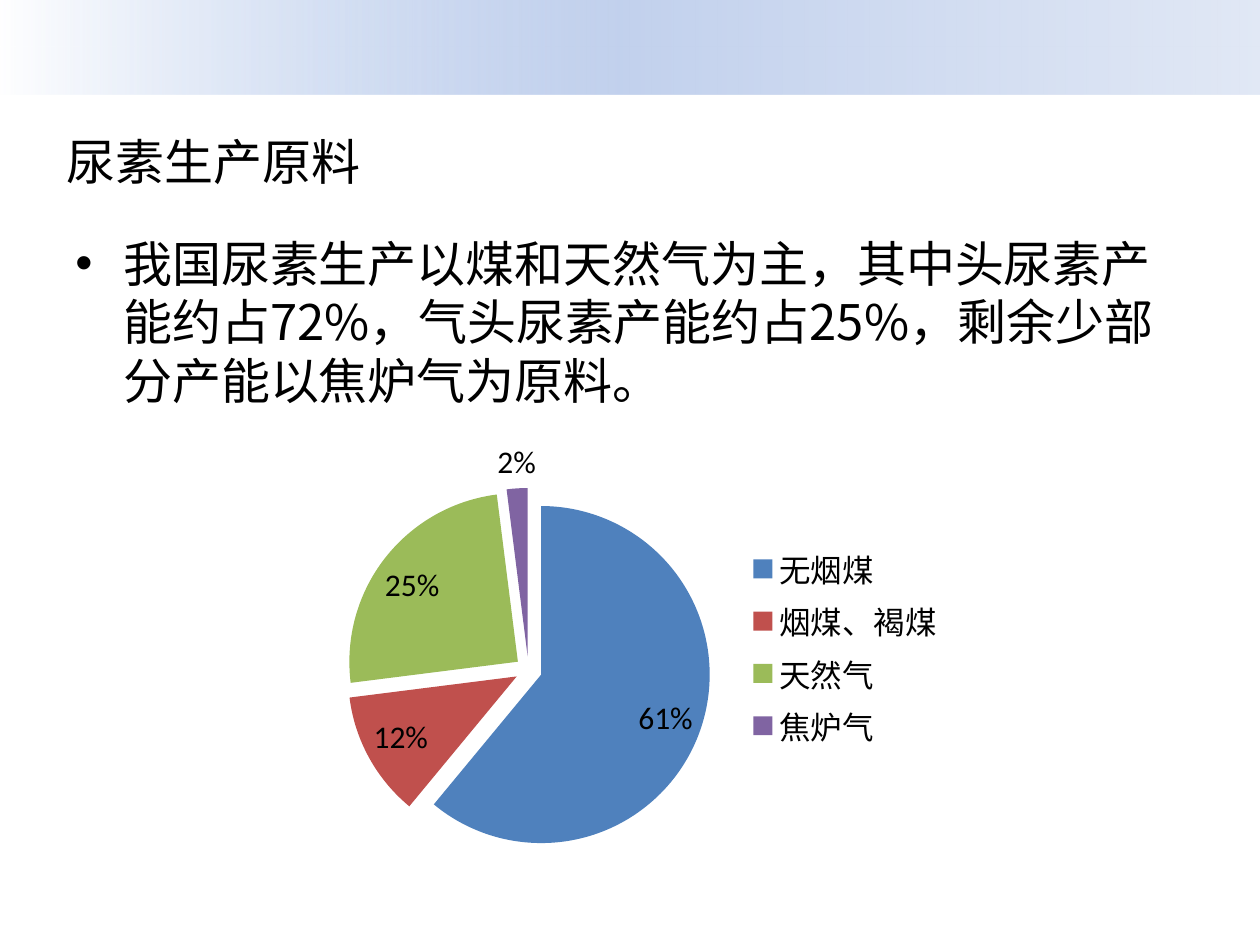
import pptx
import pptx.util
import pptx.chart.data
import pptx.dml.color
import pptx.enum.chart
import pptx.enum.shapes
import pptx.enum.text
import pptx.oxml
import pptx.oxml.ns

WIDE, HIGH = 10, 7.5
FACE = "Noto Sans CJK JP"
STOPS = [(0, "9AB5E4", 0), (50, "C2D1ED", 100), (100, "E1E8F5", 100)]
PARTS = [
    ("无烟煤", 0.61, "4F81BD"),
    ("烟煤、褐煤", 0.12, "C0504D"),
    ("天然气", 0.25, "9BBB59"),
    ("焦炉气", 0.02, "8064A2"),
]
TITLE = "尿素生产原料"
BODY = "我国尿素生产以煤和天然气为主，其中头尿素产能约占72%，气头尿素产能约占25%，剩余少部分产能以焦炉气为原料。"


def tint(color, code):
    color.rgb = pptx.dml.color.RGBColor.from_string(code)


def place(left, top, wide, high):
    shares = (left * WIDE, top * HIGH, wide * WIDE, high * HIGH)
    return [pptx.util.Inches(n) for n in shares]


def node(tag, inner="", **attrs):
    text = " ".join(f'{key}="{val}"' for key, val in attrs.items())
    space = pptx.oxml.ns.nsdecls("a")
    return pptx.oxml.parse_xml(f"<a:{tag} {space} {text}>{inner}</a:{tag}>")


def band(slide, box):
    rect = pptx.enum.shapes.MSO_SHAPE.RECTANGLE
    shape = slide.shapes.add_shape(rect, *place(*box))
    shape.shadow.inherit = False
    shape.line.fill.background()
    shape.fill.gradient()
    shape.fill.gradient_angle = 0
    stops = shape._element.spPr.find(".//" + pptx.oxml.ns.qn("a:gsLst"))
    for old in list(stops):
        stops.remove(old)
    for spot, code, alpha in STOPS:
        inner = f'<a:srgbClr val="{code}"><a:alpha val="{alpha * 1000}"/></a:srgbClr>'
        stops.append(node("gs", inner, pos=spot * 1000))


def write(slide, box, text, anchor, bullet=False):
    frame = slide.shapes.add_textbox(*place(*box)).text_frame
    frame.word_wrap = True
    frame.vertical_anchor = anchor
    frame.text = text
    para = frame.paragraphs[0]
    if bullet:
        props = para._p.get_or_add_pPr()
        indent = pptx.util.Inches(0.38)
        props.set("marL", str(indent))
        props.set("indent", str(-indent))
        props.append(node("buFont", typeface="Arial"))
        props.append(node("buChar", char="•"))
    for run in para.runs:
        run.font.size = pptx.util.Pt(28)
        run.font.name = FACE
        tint(run.font.color, "000000")
        run._r.get_or_add_rPr().append(node("ea", typeface=FACE))


def pie(slide, box):
    data = pptx.chart.data.CategoryChartData(number_format="0%")
    names, vals, codes = zip(*PARTS)
    data.categories = names
    data.add_series("Series 1", vals)
    kind = pptx.enum.chart.XL_CHART_TYPE.PIE_EXPLODED
    chart = slide.shapes.add_chart(kind, *place(*box), data).chart
    chart.has_title = False
    chart.font.size = pptx.util.Pt(18)
    chart.font.name = "Calibri"
    tint(chart.font.color, "000000")
    chart.has_legend = True
    chart.legend.position = pptx.enum.chart.XL_LEGEND_POSITION.RIGHT
    chart.legend.include_in_layout = False
    plot = chart.plots[0]
    plot.vary_by_categories = True
    plot.has_data_labels = True
    labels = plot.data_labels
    labels.show_value = True
    labels.show_percentage = False
    labels.number_format = "0%"
    labels.number_format_is_linked = False
    labels.position = pptx.enum.chart.XL_LABEL_POSITION.BEST_FIT
    series = plot.series[0]
    for burst in series._element.iter(pptx.oxml.ns.qn("c:explosion")):
        burst.set("val", "8")
    for spot, code in enumerate(codes):
        fill = series.points[spot].format.fill
        fill.solid()
        tint(fill.fore_color, code)


def main():
    deck = pptx.Presentation()
    deck.slide_width = pptx.util.Inches(WIDE)
    deck.slide_height = pptx.util.Inches(HIGH)
    slide = deck.slides.add_slide(deck.slide_layouts[6])
    anchor = pptx.enum.text.MSO_ANCHOR
    band(slide, (0, 0, 1, 0.1))
    write(slide, (0.043, 0.12, 0.9, 0.1), TITLE, anchor.MIDDLE)
    write(slide, (0.05, 0.24, 0.9, 0.66), BODY, anchor.TOP, bullet=True)
    pie(slide, (0.21, 0.45, 0.55, 0.47))
    deck.save("out.pptx")


if __name__ == "__main__":
    main()
